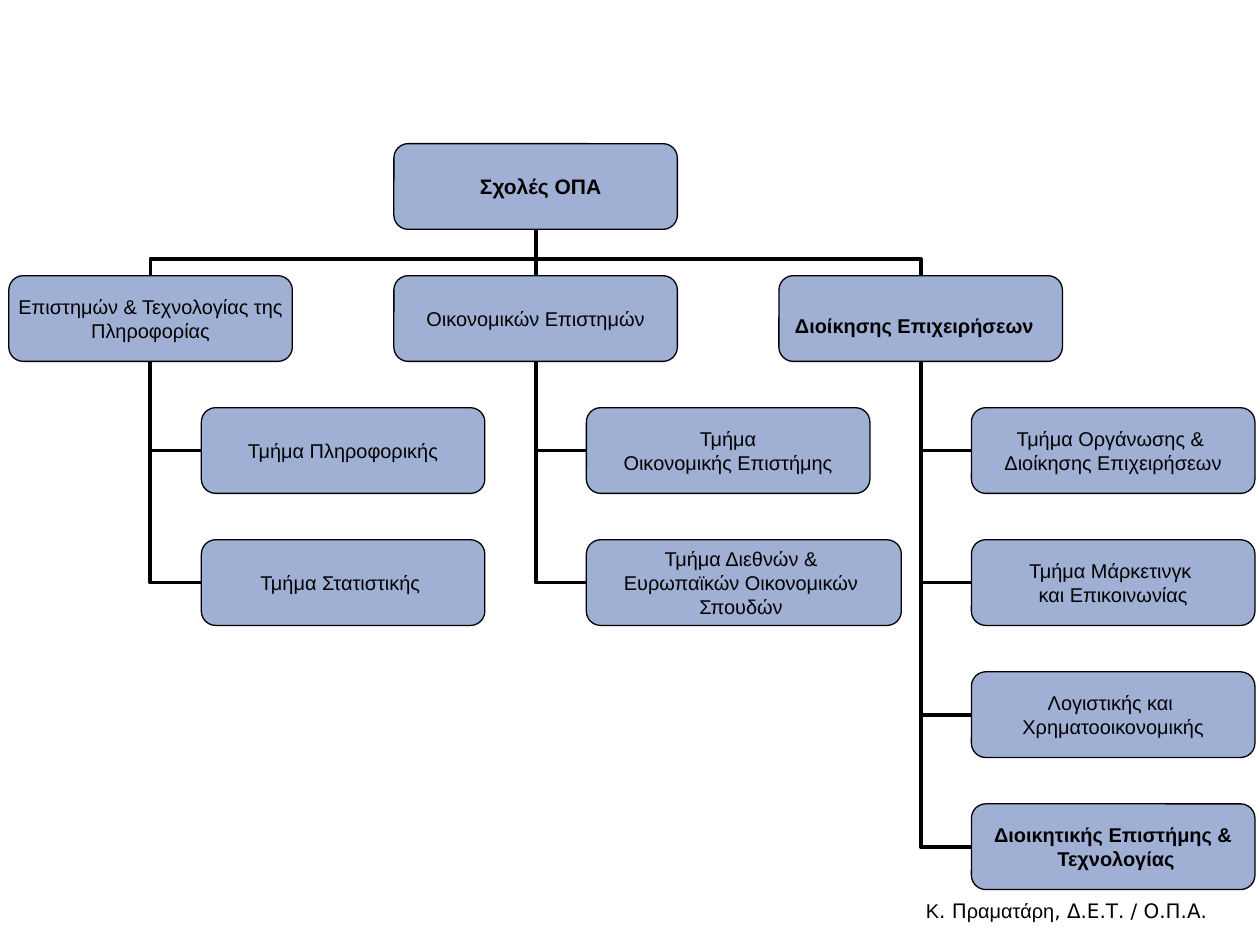
from dataclasses import dataclass

from lxml.etree import SubElement
from pptx import Presentation
from pptx.dml.color import RGBColor
from pptx.enum.shapes import MSO_CONNECTOR as Link, MSO_SHAPE as Shape
from pptx.enum.text import MSO_ANCHOR as Anchor, MSO_AUTO_SIZE as AutoSize, PP_ALIGN as Align
from pptx.oxml.ns import qn
from pptx.util import Inches, Pt

TOP, BOTTOM = 0, 2  # connection sites


@dataclass(frozen=True)
class Theme:
    fill: RGBColor = RGBColor(0xA0, 0xB0, 0xD4)
    ink: RGBColor = RGBColor(0, 0, 0)
    font: str = "Arial"
    footer_font: str = "DejaVu Sans"
    root_size: float = 12
    text_size: float = 11.4
    outline: float = 0.75
    link: float = 2.25


@dataclass(frozen=True)
class Grid:
    """Six half-columns and six rows; a child sits half a column right of its parent."""
    left: float = 0.07
    top: float = 1.14
    column: float = (7.71 - 0.07) / 5
    row: float = (6.38 - 1.14) / 5
    width: float = 2.25
    height: float = 0.68

    def at(self, column, row):
        return Inches(self.left + column * self.column), Inches(self.top + row * self.row)


class OrgChart:
    def __init__(self, slide, theme, grid):
        self.slide, self.theme, self.grid = slide, theme, grid

    def box(self, column, row, lines, size=None, bold=False, wrap=False,
            width=None, left=0, top=0, right=0):
        """Rounded box at a grid place; left, top and right are text insets."""
        shape = self.slide.shapes.add_shape(
            Shape.ROUNDED_RECTANGLE, *self.grid.at(column, row),
            Inches(width or self.grid.width), Inches(self.grid.height))
        shape.shadow.inherit = False
        shape.fill.solid()
        shape.fill.fore_color.rgb = self.theme.fill
        shape.line.color.rgb = self.theme.ink
        shape.line.width = Pt(self.theme.outline)
        frame = shape.text_frame
        frame.word_wrap = wrap
        frame.vertical_anchor = Anchor.MIDDLE
        frame.margin_left, frame.margin_top = Inches(left), Inches(top)
        frame.margin_right, frame.margin_bottom = Inches(right), 0
        frame.text = "\n".join(lines)
        for paragraph in frame.paragraphs:
            paragraph.alignment = Align.CENTER
            font = paragraph.font
            font.name, font.bold = self.theme.font, bold
            font.size = Pt(size or self.theme.text_size)
            font.color.rgb = self.theme.ink
        return shape

    def line(self, kind, *ends):
        connector = self.slide.shapes.add_connector(kind, *map(int, ends))
        connector.line.color.rgb = self.theme.ink
        connector.line.width = Pt(self.theme.link)
        SubElement(connector._element.spPr, qn("a:effectLst"))
        return connector

    def straight(self, parent, child):
        connector = self.line(Link.STRAIGHT, 0, 0, 0, 0)
        connector.begin_connect(child, TOP)
        connector.end_connect(parent, BOTTOM)

    def corner(self, parent, child):
        """One bend, from the child's left side up to the parent's bottom."""
        connector = self.line(
            Link.ELBOW, child.left, child.top + child.height / 2,
            parent.left + parent.width / 2, parent.top + parent.height)
        connector._element.spPr.find(qn("a:prstGeom")).set("prst", "bentConnector2")

    def branch(self, parent, child):
        """Two bends, from the child's top to the parent's bottom, as a turned elbow."""
        start = child.left + child.width / 2
        end = parent.left + parent.width / 2
        parent_bottom = parent.top + parent.height
        rise, run = child.top - parent_bottom, abs(start - end)
        middle_x, middle_y = (start + end) / 2, (child.top + parent_bottom) / 2
        near, far = middle_x - rise / 2, middle_x + rise / 2
        from_right = start > end
        if from_right:
            near, far = far, near
        connector = self.line(Link.ELBOW, near, middle_y - run / 2, far, middle_y + run / 2)
        properties = connector._element.spPr
        properties.find(qn("a:xfrm")).set("rot", str((90 if from_right else 270) * 60000))
        geometry = properties.find(qn("a:prstGeom"))
        values = geometry.find(qn("a:avLst"))
        if values is None:
            values = SubElement(geometry, qn("a:avLst"))
        SubElement(values, qn("a:gd"), name="adj1", fmla="val 36200")

    def footer(self, left, top, width, height, parts):
        frame = self.slide.shapes.add_textbox(*map(Inches, (left, top, width, height))).text_frame
        frame.word_wrap = True
        frame.auto_size = AutoSize.SHAPE_TO_FIT_TEXT
        paragraph = frame.paragraphs[0]
        paragraph.font.size = Pt(self.theme.text_size)
        paragraph.font.color.rgb = self.theme.ink
        for text, name in parts:
            run = paragraph.add_run()
            run.text, run.font.name = text, name


# Each school: its lines, box options, and departments as (lines, options)
SCHOOLS = [
    (["Επιστημών & Τεχνολογίας της Πληροφορίας"], {"wrap": True}, [
        (["Τμήμα Πληροφορικής"], {}),
        (["Τμήμα Στατιστικής "], {}),
    ]),
    (["Οικονομικών Επιστημών"], {}, [
        (["Τμήμα", " Οικονομικής Επιστήμης "], {}),
        (["Τμήμα Διεθνών & ", "Ευρωπαϊκών Οικονομικών ", "Σπουδών "], {"width": 2.5}),
    ]),
    (["Διοίκησης Επιχειρήσεων"], {"bold": True, "top": 0.11, "right": 0.1}, [
        (["Τμήμα Οργάνωσης & ", "Διοίκησης Επιχειρήσεων"], {}),
        (["Τμήμα Μάρκετινγκ ", "και Επικοινωνίας"], {}),
        (["Λογιστικής και ", "Χρηματοοικονομικής"], {}),
        (["Διοικητικής Επιστήμης &", " Τεχνολογίας"], {"bold": True}),
    ]),
]


def main():
    presentation = Presentation()
    presentation.slide_width, presentation.slide_height = Inches(10), Inches(7.5)
    slide = presentation.slides.add_slide(presentation.slide_layouts[6])
    theme = Theme()
    chart = OrgChart(slide, theme, Grid())
    chart.footer(7.25, 7.08, 2.81, 0.28, [
        ("Κ", theme.font), (". Π", theme.footer_font),
        ("ραματάρη", theme.font), (", Δ.Ε.Τ. / Ο.Π.Α.", theme.footer_font)])

    root_column = 2
    root = chart.box(root_column, 0, ["Σχολές ΟΠΑ"], size=theme.root_size, bold=True, left=0.08)
    for index, (lines, options, departments) in enumerate(SCHOOLS):
        column = index * 2
        school = chart.box(column, 1, lines, **options)
        connect = chart.straight if column == root_column else chart.branch
        connect(root, school)
        for row, (names, style) in enumerate(departments, start=2):
            chart.corner(school, chart.box(column + 1, row, names, **style))
    presentation.save("out.pptx")


if __name__ == "__main__":
    main()
